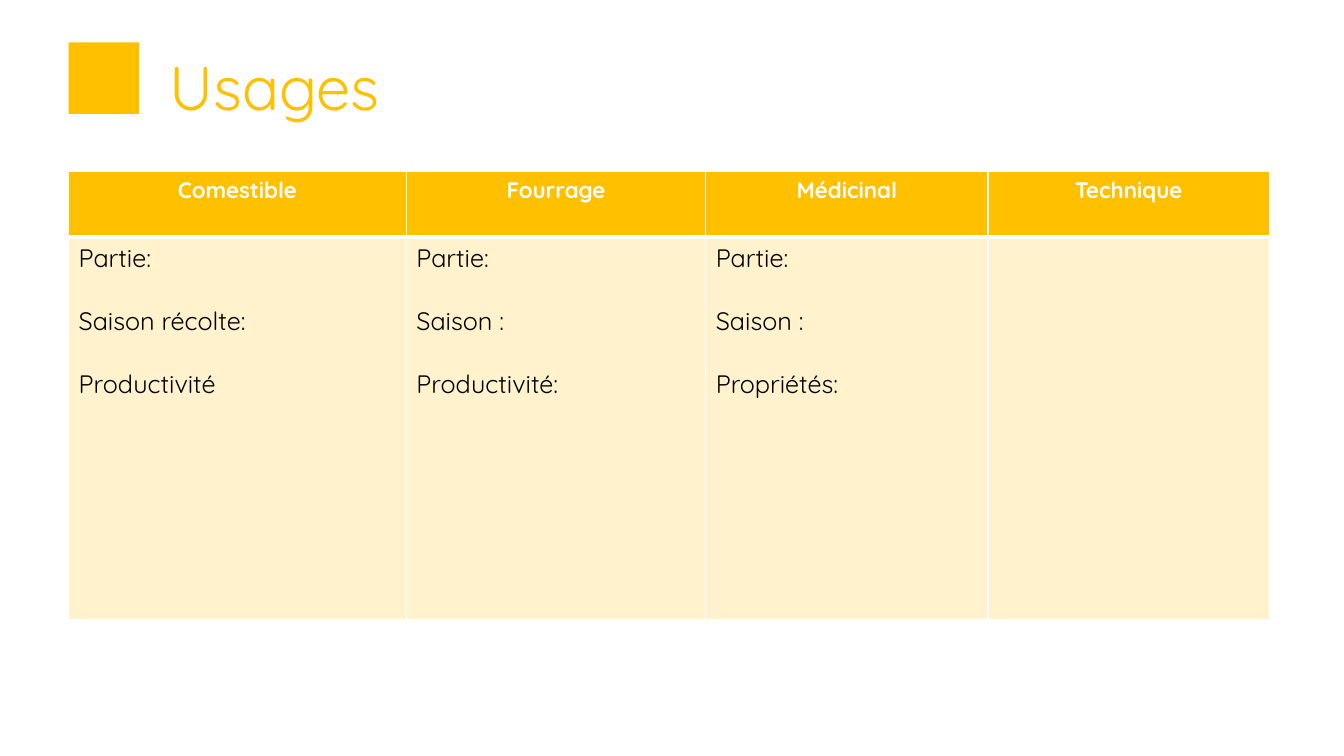
from pptx import Presentation
from pptx.dml.color import RGBColor
from pptx.enum import shapes, text
from pptx.oxml import parse_xml
from pptx.oxml.ns import nsdecls
from pptx.util import Inches, Pt

FONT = "Quicksand"
AMBER, CREAM, WHITE, BLACK = "FFC000", "FFF2CC", "FFFFFF", "000000"
COLUMN_WIDTHS = [3.35, 2.97, 2.8, 2.79]
HEADER_HEIGHT = 0.65
USES = {
    "Comestible": ["Partie:", "Saison récolte:", "Productivité"],
    "Fourrage": ["Partie:", "Saison :", "Productivité:"],
    "Médicinal": ["Partie:", "Saison :", "Propriétés:"],
    "Technique": [],
}


def paint(fill, color):
    fill.solid()
    fill.fore_color.rgb = RGBColor.from_string(color)


def style(p, size, color, bold=False):
    p.font.name = FONT
    p.font.size = Pt(size)
    p.font.bold = bold
    p.font.color.rgb = RGBColor.from_string(color)


def add_title(s, left, top, width, height):
    marker = s.shapes.add_shape(shapes.MSO_SHAPE.RECTANGLE, Inches(left),
                                Inches(top + 0.02), Inches(0.7), Inches(0.71))
    marker.shadow.inherit = False
    paint(marker.fill, AMBER)
    marker.line.fill.background()

    title = s.shapes.title
    title.left, title.top = Inches(left + 0.9), Inches(top)
    title.width, title.height = Inches(width - 0.9), Inches(height)
    tf = title.text_frame
    tf.text = "Usages"
    tf.vertical_anchor = text.MSO_ANCHOR.MIDDLE
    p = tf.paragraphs[0]
    p.alignment = text.PP_ALIGN.LEFT
    p.line_spacing = 0.9
    style(p, 44, AMBER)


def add_borders(cell, **widths):
    """Draw white cell borders, with widths in points for sides L, R, T and B."""
    tc_pr = cell._tc.get_or_add_tcPr()
    for side in "LRTB":
        tc_pr.append(parse_xml(
            f'<a:ln{side} {nsdecls("a")} w="{Pt(widths.get(side, 1))}"><a:solidFill>'
            f'<a:srgbClr val="{WHITE}"/></a:solidFill></a:ln{side}>'))


def add_uses_table(s, left, top, width, height):
    table = s.shapes.add_table(2, len(USES), Inches(left), Inches(top),
                               Inches(width), Inches(height)).table
    table.rows[0].height = Inches(HEADER_HEIGHT)
    table.rows[1].height = Inches(height - HEADER_HEIGHT)
    for col, (use, details) in enumerate(USES.items()):
        table.columns[col].width = Inches(COLUMN_WIDTHS[col])
        header, body = table.cell(0, col), table.cell(1, col)

        add_borders(header, B=3)
        paint(header.fill, AMBER)
        header.text = use
        p = header.text_frame.paragraphs[0]
        p.alignment = text.PP_ALIGN.CENTER
        style(p, 16, WHITE, bold=True)

        add_borders(body, T=3)
        paint(body.fill, CREAM)
        body.text = "\n".join(details)
        for p in body.text_frame.paragraphs:
            p.space_after = Pt(22.5)
            style(p, 18, BLACK)


def main():
    prs = Presentation()
    prs.slide_width, prs.slide_height = Inches(13.33), Inches(7.5)
    s = prs.slides.add_slide(prs.slide_layouts[5])
    add_title(s, 0.68, 0.4, 11.74, 0.99)
    add_uses_table(s, 0.68, 1.7, sum(COLUMN_WIDTHS), 4.45)
    prs.save("out.pptx")


if __name__ == "__main__":
    main()
